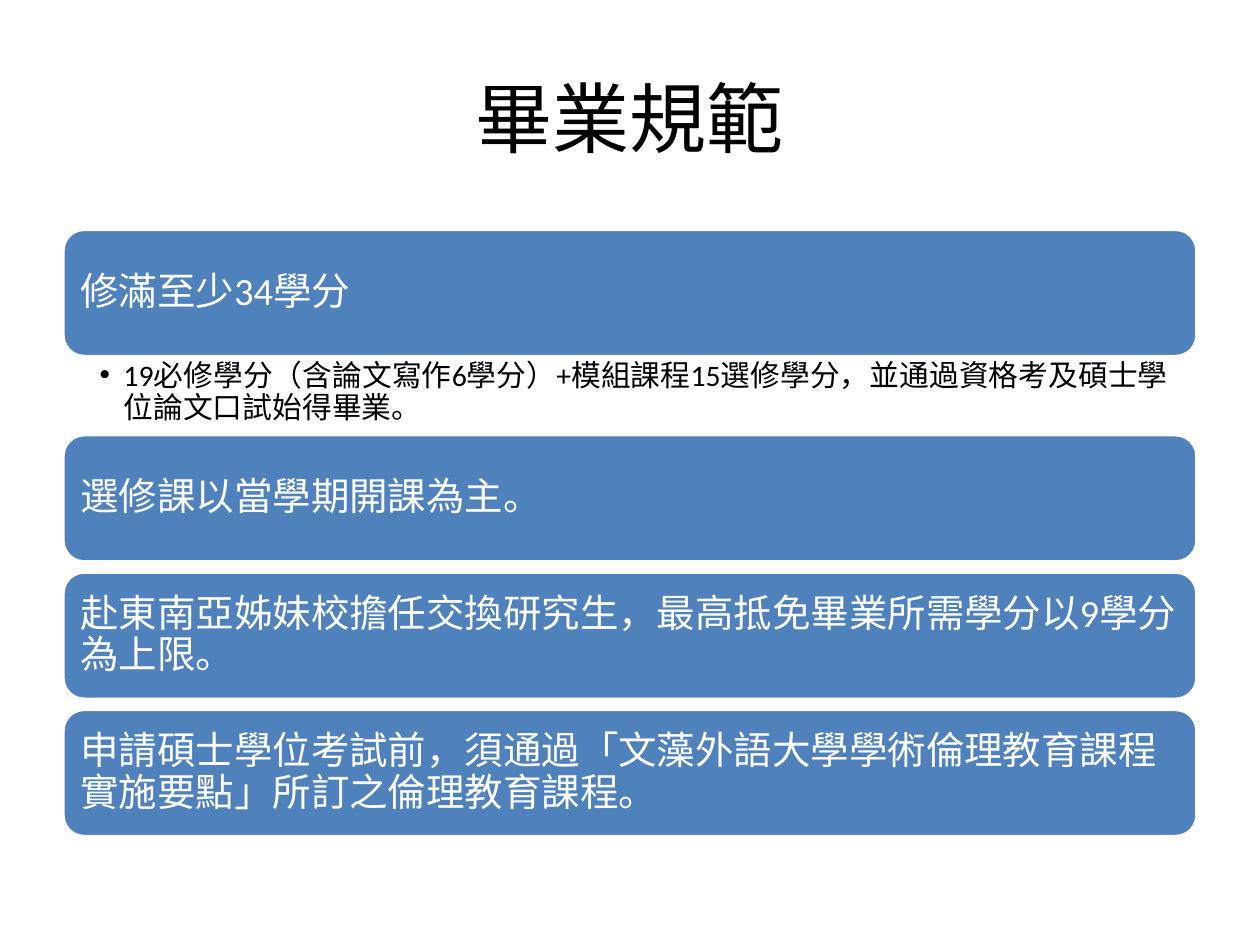
from lxml.etree import SubElement
from pptx import Presentation
from pptx.dml.color import RGBColor
from pptx.enum.shapes import MSO_SHAPE as Shape
from pptx.enum.text import MSO_ANCHOR as Anchor, PP_ALIGN as Align
from pptx.oxml.ns import qn
from pptx.util import Inches, Pt

BLUE = RGBColor(0x4F, 0x81, 0xBD)
WHITE = RGBColor(0xFF, 0xFF, 0xFF)
BLACK = RGBColor(0x00, 0x00, 0x00)
LATIN_FONT = "Calibri"
CJK_FONT = "Noto Sans CJK TC"

LEFT, WIDTH = 0.5, 9
BAR_HEIGHT, BAR_GAP = 1.01, 0.08
DETAIL_HEIGHT = 0.62
FIRST_TOP = 1.82

# Each rule is a bar heading with an optional detail line below it.
RULES = [
    ("修滿至少34學分",
     "19必修學分（含論文寫作6學分）+模組課程15選修學分，並通過資格考及碩士學位論文口試始得畢業。"),
    ("選修課以當學期開課為主。", None),
    ("赴東南亞姊妹校擔任交換研究生，最高抵免畢業所需學分以9學分為上限。", None),
    ("申請碩士學位考試前，須通過「文藻外語大學學術倫理教育課程實施要點」所訂之倫理教育課程。", None),
]


class SlideBuilder:
    def __init__(self, slide):
        self.slide = slide

    def add_text(self, shape, text, size, color, insets, anchor, align=Align.LEFT,
                 font=LATIN_FONT, line_spacing=0.9):
        """Fill the shape with one run; insets are left, top, right, bottom."""
        frame = shape.text_frame
        frame.word_wrap = True
        frame.vertical_anchor = anchor
        (frame.margin_left, frame.margin_top,
         frame.margin_right, frame.margin_bottom) = map(Inches, insets)
        paragraph = frame.paragraphs[0]
        paragraph.alignment = align
        paragraph.line_spacing = line_spacing
        run = paragraph.add_run()
        run.text = text
        run.font.size = Pt(size)
        run.font.name = font
        run.font.color.rgb = color
        SubElement(run._r.get_or_add_rPr(), qn("a:ea"), typeface=CJK_FONT)
        return paragraph

    def title(self, text):
        title = self.slide.shapes.title
        title.left, title.top = Inches(LEFT), Inches(0.3)
        title.width, title.height = Inches(WIDTH), Inches(1.25)
        self.add_text(title, text, 44, BLACK, (0.1, 0.05, 0.1, 0.05), Anchor.MIDDLE,
                      Align.CENTER, CJK_FONT, 1.0)

    def bar(self, top, text):
        bar = self.slide.shapes.add_shape(
            Shape.ROUNDED_RECTANGLE, Inches(LEFT), Inches(top),
            Inches(WIDTH), Inches(BAR_HEIGHT))
        bar.shadow.inherit = False
        bar.fill.solid()
        bar.fill.fore_color.rgb = BLUE
        bar.line.color.rgb = WHITE
        bar.line.width = Pt(2)
        self.add_text(bar, text, 22, WHITE, (0.09,) * 4, Anchor.MIDDLE)

    def detail(self, top, text):
        box = self.slide.shapes.add_textbox(
            Inches(LEFT), Inches(top), Inches(WIDTH), Inches(DETAIL_HEIGHT))
        paragraph = self.add_text(box, text, 17, BLACK, (0.29, 0.03, 0.17, 0.03), Anchor.TOP)
        paragraph.level = 1
        properties = paragraph._p.get_or_add_pPr()
        properties.set("marL", str(Inches(0.19)))
        properties.set("indent", str(-Inches(0.19)))
        SubElement(properties, qn("a:buFont"), typeface="Arial")
        SubElement(properties, qn("a:buChar"), char="•")


def main():
    presentation = Presentation()
    presentation.slide_width, presentation.slide_height = Inches(10), Inches(7.5)
    title_only = presentation.slide_layouts[5]
    builder = SlideBuilder(presentation.slides.add_slide(title_only))

    builder.title("畢業規範")
    top = FIRST_TOP
    for heading, detail in RULES:
        builder.bar(top, heading)
        top += BAR_HEIGHT
        if detail:
            builder.detail(top, detail)
            top += DETAIL_HEIGHT
        else:
            top += BAR_GAP
    presentation.save("out.pptx")


if __name__ == "__main__":
    main()
